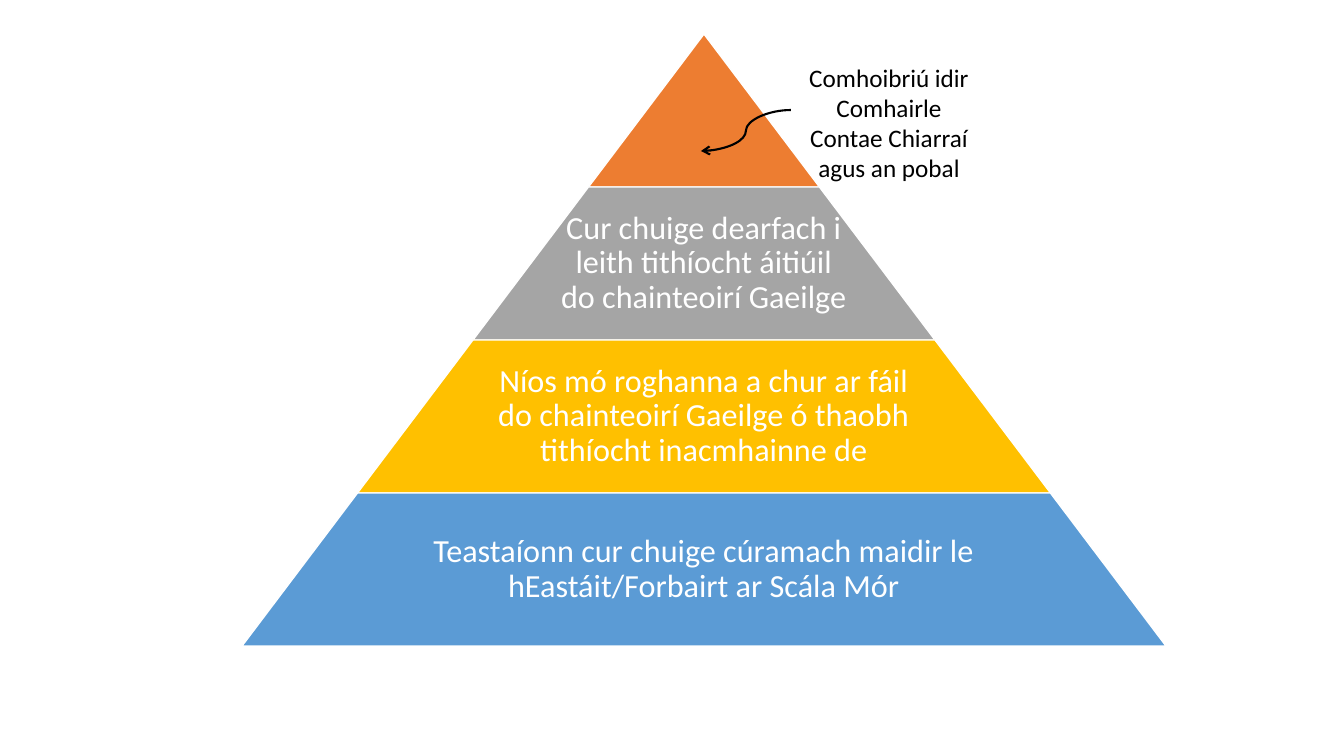
from lxml import etree
from pptx import Presentation
from pptx.dml.color import RGBColor
from pptx.enum.shapes import MSO_CONNECTOR, MSO_SHAPE
from pptx.enum.text import MSO_ANCHOR, MSO_AUTO_SIZE, PP_ALIGN
from pptx.oxml.ns import qn
from pptx.util import Pt

TRAPEZOID = MSO_SHAPE.TRAPEZOID
CURVE = MSO_CONNECTOR.CURVE
CENTER = PP_ALIGN.CENTER
TOP, MIDDLE = MSO_ANCHOR.TOP, MSO_ANCHOR.MIDDLE
FIXED, GROW = MSO_AUTO_SIZE.NONE, MSO_AUTO_SIZE.SHAPE_TO_FIT_TEXT


def px(*vals):
    return [round(val * 914400 / 100.8) for val in vals]


def color(code):
    return RGBColor.from_string(code)


deck = Presentation()
deck.slide_width, deck.slide_height = px(1344, 756)
slide = deck.slides.add_slide(deck.slide_layouts[6])
shapes = slide.shapes

# Pyramid levels, each one step wider than the level above
MID, PEAK, STEP, TALL = 704, 34, 231, 153
levels = [
    ("ED7D31", ""),
    ("A5A5A5", "Cur chuige dearfach i leith tithíocht áitiúil "
               "do chainteoirí Gaeilge"),
    ("FFC000", "Níos mó roghanna a chur ar fáil do chainteoirí Gaeilge "
               "ó thaobh tithíocht inacmhainne de"),
    ("5B9BD5", "Teastaíonn cur chuige cúramach maidir le "
               "hEastáit/Forbairt ar Scála Mór"),
]
inset = px(3)[0]
tight = dict(vertical_anchor=MIDDLE, auto_size=FIXED, margin_left=inset,
             margin_right=inset, margin_top=inset, margin_bottom=inset)
labels = []
for i, (fill, text) in enumerate(levels):
    wide, top = STEP * (i + 1), PEAK + TALL * i
    level = shapes.add_shape(TRAPEZOID, *px(MID - wide / 2, top, wide, TALL))
    level.adjustments[0] = STEP / 2 / TALL
    level.shadow.inherit = False
    level.fill.solid()
    level.fill.fore_color.rgb = color(fill)
    level.line.color.rgb = color("FFFFFF")
    level.line.width = Pt(1)
    if text:
        room = round(wide * 0.65)
        labels.append((text, (MID - room / 2, top, room, TALL),
                       23, "FFFFFF", 0.9, tight))

# Level labels and the side note
labels.append(("Comhoibriú idir Comhairle Contae Chiarraí agus an pobal",
               (791, 57, 196, 105), 18, "000000", 1.0,
               dict(vertical_anchor=TOP, auto_size=GROW)))
for text, place, size, ink, gap, form in labels:
    frame = shapes.add_textbox(*px(*place)).text_frame
    for key, val in dict(form, word_wrap=True).items():
        setattr(frame, key, val)
    para = frame.paragraphs[0]
    para.alignment, para.line_spacing = CENTER, gap
    run = para.add_run()
    run.text = text
    for key, val in dict(name="Calibri", size=Pt(size)).items():
        setattr(run.font, key, val)
    run.font.color.rgb = color(ink)

# Curved arrow from the note to the peak
arrow = shapes.add_connector(CURVE, *px(791, 110, 701, 151))
arrow.line.color.rgb = color("000000")
arrow.line.width = Pt(1.5)
etree.SubElement(arrow.line._get_or_add_ln(), qn("a:tailEnd"), type="arrow")
etree.SubElement(arrow._element.spPr, qn("a:effectLst"))

deck.save("out.pptx")
